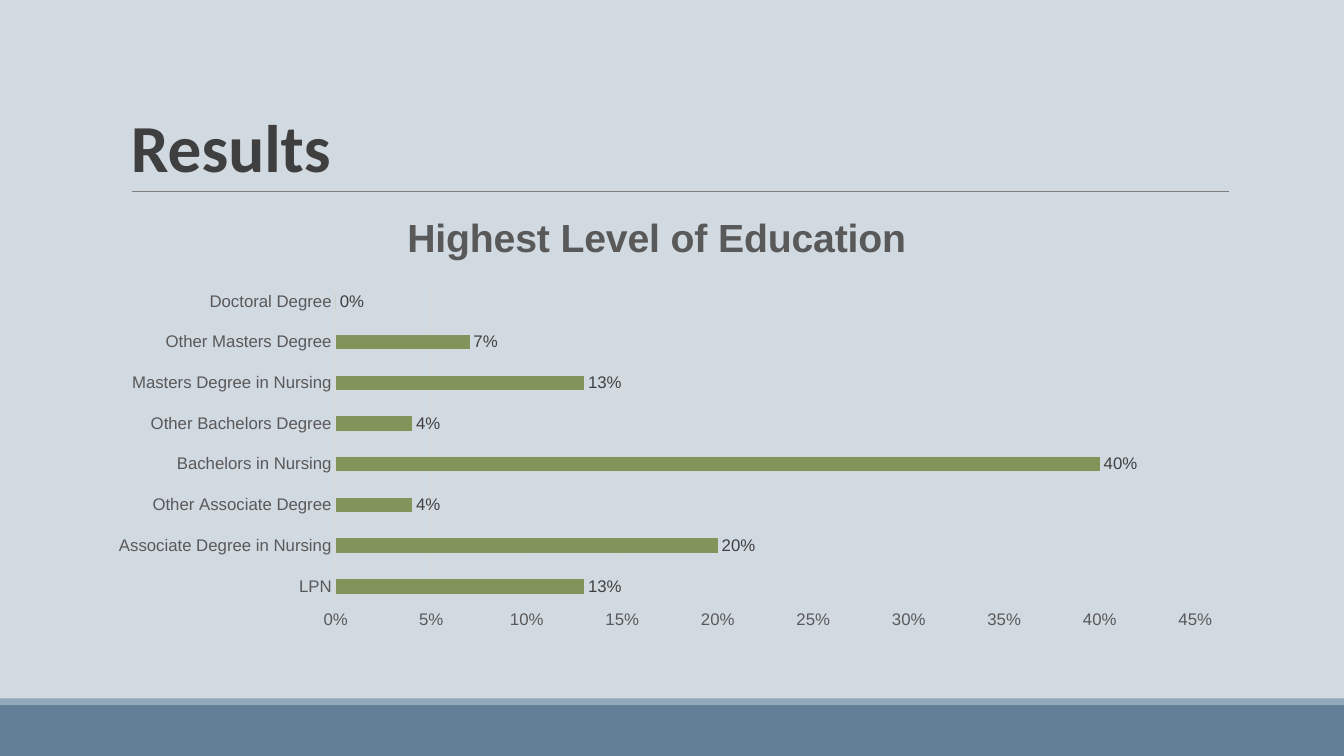
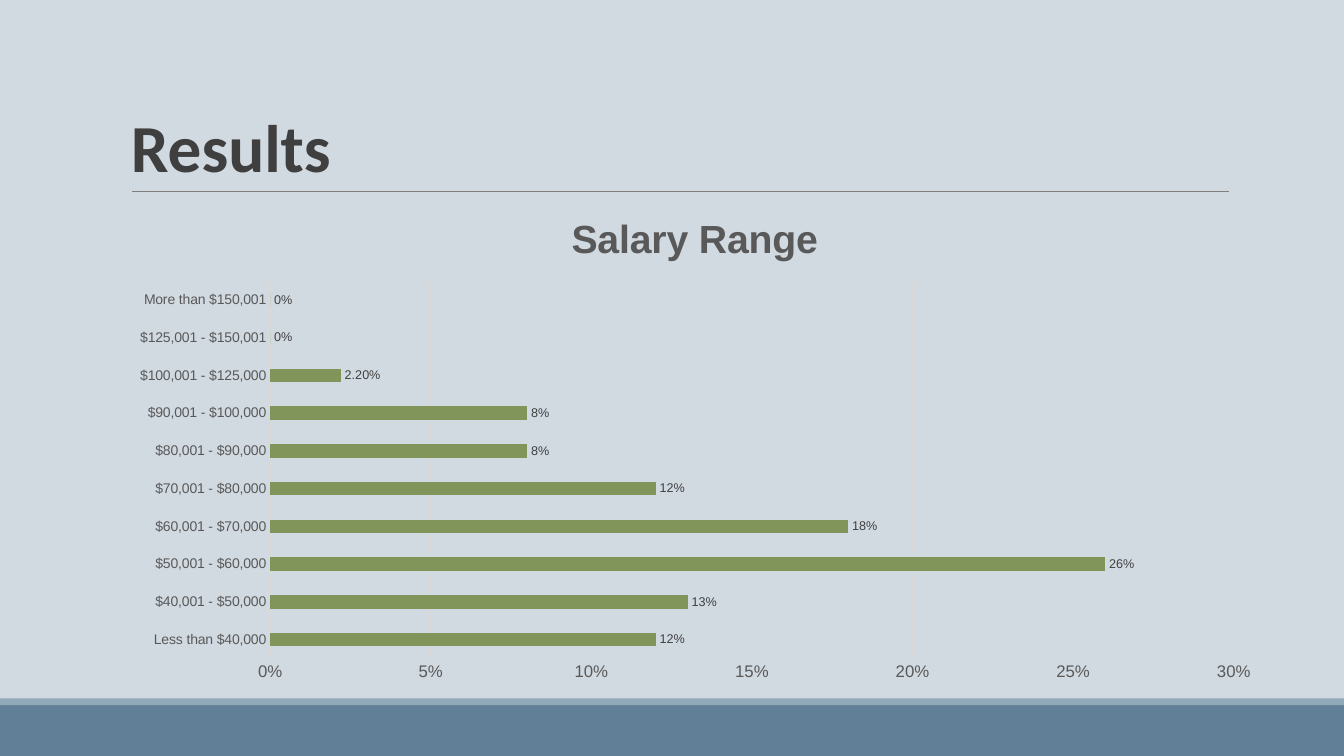
"""Build two survey result slides, each with a ruled title and a bar chart."""
import dataclasses

import lxml.etree
import pptx
import pptx.chart.data
import pptx.dml.color
import pptx.enum.chart
import pptx.enum.shapes
import pptx.enum.text
import pptx.oxml.ns
import pptx.util

Cm = pptx.util.Cm
Pt = pptx.util.Pt


@dataclasses.dataclass(frozen=True)
class Theme:
    """Colours, fonts and type sizes of the presentation."""

    background: str = "D1D9E1"
    footer: str = "618097"
    footer_edge: str = "92A9B9"
    title: str = "3F3F3F"
    rule: str = "7F7F7F"
    axis_text: str = "595959"
    label_text: str = "404040"
    grid: str = "D9D9D9"
    bar: str = "81955B"
    title_font: str = "Calibri"
    chart_font: str = "Arial"
    title_size: int = 48
    chart_title_size: int = 28
    axis_size: int = 12
    hairline: float = 0.75


@dataclasses.dataclass(frozen=True)
class Box:
    """A region of the slide in centimetres."""

    left: float
    top: float
    width: float
    height: float

    def lengths(self):
        """Return left, top, width and height as lengths."""
        return [Cm(value) for value in dataclasses.astuple(self)]


@dataclasses.dataclass(frozen=True)
class Survey:
    """One survey question with its answers and chart settings."""

    question: str
    shares: dict
    area: Box
    plot: dict
    axis_max: float
    category_size: int
    label_size: int
    exact_labels: dict = dataclasses.field(default_factory=dict)


THEME = Theme()
SLIDE = Box(0, 0, 33.87, 19.05)
FOOTER = Box(0, 17.6, SLIDE.width, 1.45)
TITLE = Box(3.05, 0.79, 27.94, 4.04)

EDUCATION = Survey(
    question="Highest Level of Education",
    shares={
        "LPN": 0.13,
        "Associate Degree in Nursing": 0.2,
        "Other Associate Degree": 0.04,
        "Bachelors in Nursing": 0.4,
        "Other Bachelors Degree": 0.04,
        "Masters Degree in Nursing": 0.13,
        "Other Masters Degree": 0.07,
        "Doctoral Degree": 0,
    },
    area=Box(2.11, 4.83, 28.88, 11.25),
    plot={"x": 0.22, "y": 0.2, "w": 0.75, "h": 0.73},
    axis_max=0.45,
    category_size=12,
    label_size=12,
)

SALARY = Survey(
    question="Salary Range",
    shares={
        "Less than $40,000": 0.12,
        "$40,001 - $50,000": 0.13,
        "$50,001 - $60,000": 0.26,
        "$60,001 - $70,000": 0.18,
        "$70,001 - $80,000": 0.12,
        "$80,001 - $90,000": 0.08,
        "$90,001 - $100,000": 0.08,
        "$100,001 - $125,000": 0.022,
        "$125,001 - $150,001": 0,
        "More than $150,001": 0,
    },
    area=Box(3.05, 4.83, 28.91, 12.52),
    plot={"x": 0.13, "y": 0.18, "w": 0.84, "h": 0.76},
    axis_max=0.3,
    category_size=10,
    label_size=9,
    exact_labels={"$100,001 - $125,000": "2.20%"},
)


def rgb(code):
    """Return a colour from its hexadecimal code."""
    return pptx.dml.color.RGBColor.from_string(code)


def set_values(target, values):
    """Set each named attribute of the target."""
    for name, value in values.items():
        setattr(target, name, value)


def style_font(font, name, size, colour, bold=False):
    """Give a font its face, size, weight and colour."""
    set_values(font, {"name": name, "size": Pt(size), "bold": bold})
    font.color.rgb = rgb(colour)


def style_line(line, colour):
    """Make a line a hairline of the given colour."""
    line.color.rgb = rgb(colour)
    line.width = Pt(THEME.hairline)


def add_band(slide, box, colour):
    """Add a plain filled band."""
    band = slide.shapes.add_shape(
        pptx.enum.shapes.MSO_SHAPE.RECTANGLE, *box.lengths())
    band.shadow.inherit = False
    band.fill.solid()
    band.fill.fore_color.rgb = rgb(colour)
    band.line.fill.background()


def add_footer(slide, box):
    """Add the footer band with its lighter upper edge."""
    edge_height = 0.17
    add_band(slide, Box(box.left, box.top + edge_height, box.width,
                        box.height - edge_height), THEME.footer)
    add_band(slide, Box(box.left, box.top, box.width, edge_height),
             THEME.footer_edge)


def add_title(slide, box, text):
    """Add the slide title and the rule below it."""
    rule_left, rule_y = Cm(box.left + 0.28), Cm(box.top + box.height)
    rule = slide.shapes.add_connector(
        pptx.enum.shapes.MSO_CONNECTOR.STRAIGHT,
        rule_left, rule_y, Cm(box.left + box.width - 0.03), rule_y)
    style_line(rule.line, THEME.rule)
    lxml.etree.SubElement(
        rule.element.spPr, pptx.oxml.ns.qn("a:effectLst"))

    frame = slide.shapes.add_textbox(*box.lengths()).text_frame
    set_values(frame, {
        "word_wrap": True,
        "vertical_anchor": pptx.enum.text.MSO_ANCHOR.BOTTOM,
        "text": text,
    })
    heading = frame.paragraphs[0]
    heading.line_spacing = 0.85
    style_font(heading.runs[0].font, THEME.title_font, THEME.title_size,
               THEME.title, bold=True)


def place_plot(chart, fractions):
    """Fix the inner plot area as fractions of the chart."""
    qn = pptx.oxml.ns.qn
    plot_area = chart.element.find(".//" + qn("c:plotArea"))
    for automatic in plot_area.findall(qn("c:layout")):
        plot_area.remove(automatic)
    layout = lxml.etree.Element(qn("c:layout"))
    plot_area.insert(0, layout)
    manual = lxml.etree.SubElement(layout, qn("c:manualLayout"))
    settings = {"layoutTarget": "inner", "xMode": "edge", "yMode": "edge",
                **fractions}
    for name, value in settings.items():
        lxml.etree.SubElement(manual, qn("c:" + name), val=str(value))


def style_axes(chart, survey):
    """Format the category and value axes."""
    sizes = ((chart.category_axis, survey.category_size),
             (chart.value_axis, THEME.axis_size))
    for axis, size in sizes:
        set_values(axis, {
            "major_tick_mark": pptx.enum.chart.XL_TICK_MARK.NONE,
            "minor_tick_mark": pptx.enum.chart.XL_TICK_MARK.NONE,
        })
        style_font(axis.tick_labels.font, THEME.chart_font, size,
                   THEME.axis_text)
    chart.category_axis.has_major_gridlines = False
    style_line(chart.category_axis.format.line, THEME.grid)

    share_axis = chart.value_axis
    set_values(share_axis, {
        "minimum_scale": 0,
        "maximum_scale": survey.axis_max,
        "major_unit": 0.05,
        "has_major_gridlines": True,
    })
    share_axis.format.line.fill.background()
    style_line(share_axis.major_gridlines.format.line, THEME.grid)
    set_values(share_axis.tick_labels, {
        "number_format": "0%", "number_format_is_linked": False})


def style_bars(plot, survey):
    """Format the bars and their labels."""
    set_values(plot, {"gap_width": 182, "vary_by_categories": False})
    shares = plot.series[0]
    shares.format.fill.solid()
    shares.format.fill.fore_color.rgb = rgb(THEME.bar)
    outside = pptx.enum.chart.XL_LABEL_POSITION.OUTSIDE_END
    set_values(shares.data_labels, {
        "show_value": True,
        "position": outside,
        "number_format": "0%",
        "number_format_is_linked": False,
    })
    label_style = (THEME.chart_font, survey.label_size, THEME.label_text)
    style_font(shares.data_labels.font, *label_style)
    answers = list(survey.shares)
    for answer, text in survey.exact_labels.items():
        label = shares.points[answers.index(answer)].data_label
        label.text_frame.text = text
        style_font(label.text_frame.paragraphs[0].runs[0].font, *label_style)
        label.position = outside


def add_survey_chart(slide, box, survey):
    """Add the bar chart of one survey question."""
    answers = pptx.chart.data.CategoryChartData(number_format="0%")
    answers.categories = list(survey.shares)
    answers.add_series("Series 1", list(survey.shares.values()))
    chart = slide.shapes.add_chart(
        pptx.enum.chart.XL_CHART_TYPE.BAR_CLUSTERED,
        *box.lengths(), answers).chart
    set_values(chart, {"has_legend": False, "has_title": True})
    style_font(chart.font, THEME.chart_font, 10, "000000")
    chart.chart_title.include_in_layout = False
    question = chart.chart_title.text_frame
    question.text = survey.question
    style_font(question.paragraphs[0].runs[0].font, THEME.chart_font,
               THEME.chart_title_size, THEME.axis_text, bold=True)
    style_axes(chart, survey)
    style_bars(chart.plots[0], survey)
    place_plot(chart, survey.plot)


def add_result_slide(deck, survey):
    """Add one result slide."""
    slide = deck.slides.add_slide(deck.slide_layouts[6])
    slide.background.fill.solid()
    slide.background.fill.fore_color.rgb = rgb(THEME.background)
    add_footer(slide, FOOTER)
    add_title(slide, TITLE, "Results")
    add_survey_chart(slide, survey.area, survey)


def main():
    """Build and save the presentation."""
    deck = pptx.Presentation()
    set_values(deck, {"slide_width": Cm(SLIDE.width),
                      "slide_height": Cm(SLIDE.height)})
    for survey in (EDUCATION, SALARY):
        add_result_slide(deck, survey)
    deck.save("out.pptx")


if __name__ == "__main__":
    main()
